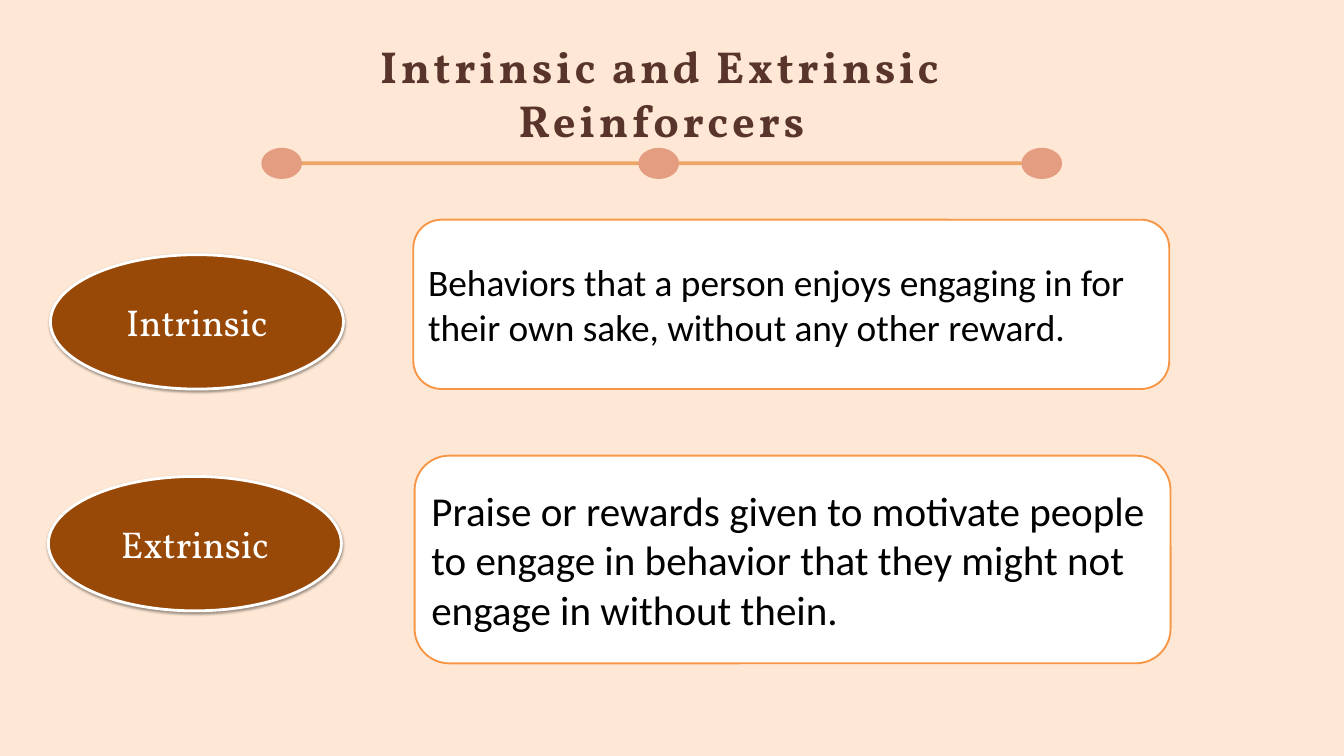
from lxml import etree
from pptx import Presentation
from pptx.dml.color import RGBColor
from pptx.enum import shapes, text
from pptx.oxml.ns import qn
from pptx.util import Pt

COLORS = {
    "page": "FEE8D5", "rule": "ECA666", "dot": "E49D81", "title": "59342B",
    "oval": "984807", "edge": "F79646", "white": "FFFFFF", "black": "000000",
}


def write(shape, words, font="Calibri", size=40, color="black", bold=False,
          align="LEFT", anchor="MIDDLE", space=0):
    frame = shape.text_frame
    frame.word_wrap = True
    frame.vertical_anchor = getattr(text.MSO_ANCHOR, anchor)
    para = frame.paragraphs[0]
    para.alignment = getattr(text.PP_ALIGN, align)
    run = para.add_run()
    run.text = words
    run.font.name = font
    run.font.size = Pt(size)
    run.font.bold = bold
    run.font.color.rgb = RGBColor.from_string(COLORS[color])
    if space:
        run.font._element.set("spc", str(space * 100))


def draw(kind, box, fill, line=None, width=0):
    shape = slide.shapes.add_shape(getattr(shapes.MSO_SHAPE, kind), *map(Pt, box))
    shape.shadow.inherit = False
    shape.fill.solid()
    shape.fill.fore_color.rgb = RGBColor.from_string(COLORS[fill])
    if line:
        shape.line.color.rgb = RGBColor.from_string(COLORS[line])
        shape.line.width = Pt(width)
    else:
        shape.line.fill.background()
    return shape


deck = Presentation()
deck.slide_width, deck.slide_height = Pt(1440), Pt(810)
slide = deck.slides.add_slide(deck.slide_layouts[5])
back = slide.background.fill
back.solid()
back.fore_color.rgb = RGBColor.from_string(COLORS["page"])

title = slide.shapes.title
title.left, title.top, title.width, title.height = map(Pt, (368, 14.4, 682, 144))
frame = title.text_frame
frame.margin_left = frame.margin_right = frame.margin_bottom = 0
frame.margin_top = Pt(27.4)
frame.auto_size = text.MSO_AUTO_SIZE.SHAPE_TO_FIT_TEXT
write(title, "Intrinsic and Extrinsic Reinforcers", font="Vollkorn", size=48,
      color="title", bold=True, align="CENTER", anchor="TOP", space=4)

draw("RECTANGLE", (311, 172.8, 790.6, 4.3), "rule")
for left in (280, 684, 1094.4):
    draw("OVAL", (left, 158.4, 43.6, 33.4), "dot")

for name, left, top in (("Intrinsic", 54, 272.9), ("Extrinsic", 51.8, 510.5)):
    oval = draw("OVAL", (left, top, 314, 144), "oval", "white", 3)
    glow = etree.SubElement(
        oval._element.spPr.find(qn("a:effectLst")), qn("a:outerShdw"),
        blurRad=str(Pt(3.1)), dist=str(Pt(1.6)), dir="5400000", rotWithShape="0")
    tint = etree.SubElement(glow, qn("a:srgbClr"), val=COLORS["black"])
    etree.SubElement(tint, qn("a:alpha"), val="38000")
    write(oval, name, font="Vollkorn", color="white", align="CENTER")

cards = (
    ("Behaviors that a person enjoys engaging in for their own sake, "
     "without any other reward.", 442.8, 235.4, 181.4, 40),
    ("Praise or rewards given to motivate people to engage in behavior "
     "that they might not engage in without thein.", 444.2, 488.2, 222.5, 44),
)
for words, left, top, height, size in cards:
    card = draw("ROUNDED_RECTANGLE", (left, top, 810, height), "white", "edge", 2)
    write(card, words, size=size)

deck.save("out.pptx")
